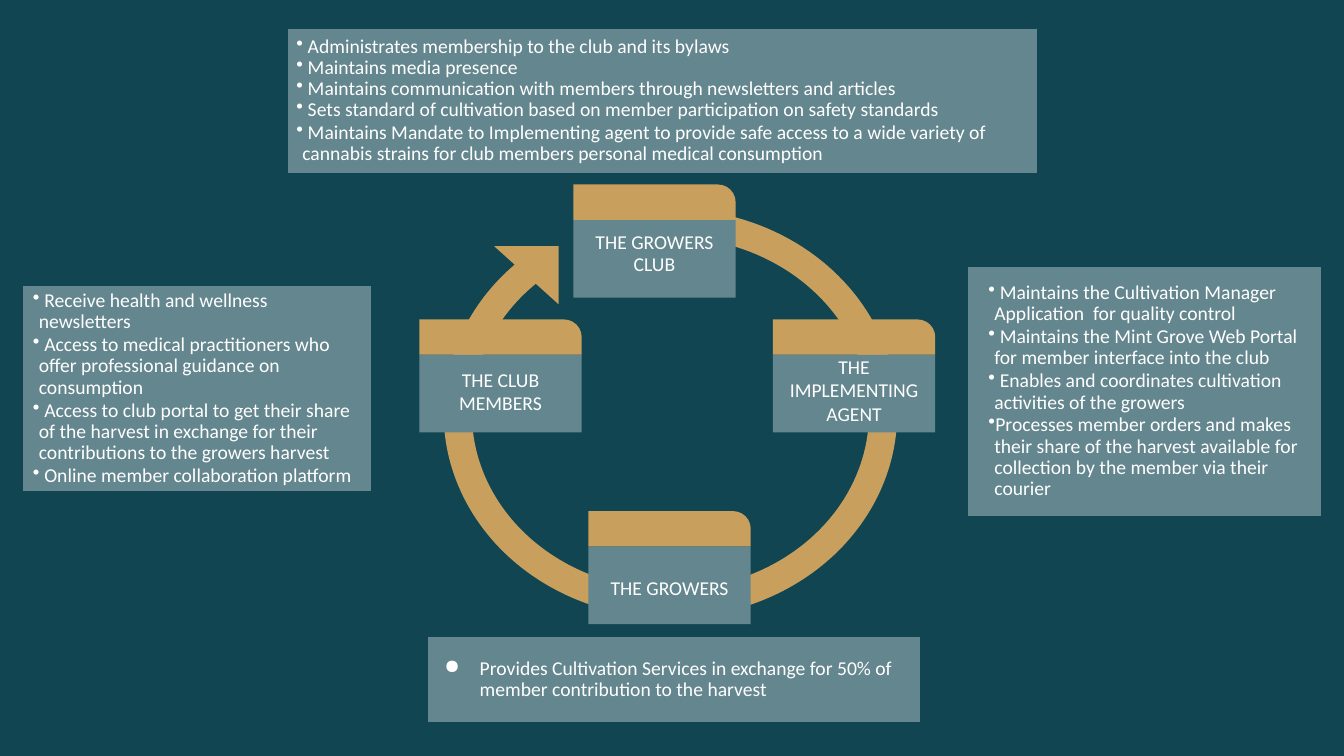
from lxml import etree
from pptx import Presentation
from pptx import util as u
from pptx.dml.color import RGBColor
from pptx.enum import shapes, text
from pptx.oxml.ns import qn

DARK, SLATE, GOLD, WHITE = "104551", "64868E", "C89F5D", "FFFFFF"
KIND = shapes.MSO_SHAPE
NODE_W, TAB_H, BODY_H = 4.09, 0.89, 1.96

# left, top, label, line spacing, top inset
NODES = [
    (19.48, 8.05, "THE IMPLEMENTING AGENT", 1, 0),
    (14.45, 4.65, "THE GROWERS CLUB", 0.9, 0.33),
    (10.57, 8.05, "THE CLUB MEMBERS", 1, 0.33),
    (14.83, 12.88, "THE GROWERS", 0.9, 0.82),
]

# box, (left inset, right inset), (bullet, margin, indent),
# first item with a gap above it, items
TIGHT = ("•", 0.15, -0.25)
WIDE = ("●", 1.27, -0.89)
PANELS = [
    ((24.38, 6.71, 8.92, 6.3), (0.53, 0.56), TIGHT, 1, [
        " Maintains the Cultivation Manager Application  for quality control",
        " Maintains the Mint Grove Web Portal for member interface into the club",
        " Enables and coordinates cultivation activities of the growers",
        "Processes member orders and makes their share of the harvest "
        "available for collection by the member via their courier",
    ]),
    ((7.24, 0.71, 18.92, 3.66), (0.23, 0), TIGHT, 4, [
        " Administrates membership to the club and its bylaws",
        " Maintains media presence",
        " Maintains communication with members through newsletters and articles",
        " Sets standard of cultivation based on member participation on "
        "safety standards",
        " Maintains Mandate to Implementing agent to provide safe access to a "
        "wide variety of cannabis strains for club members personal medical "
        "consumption",
    ]),
    ((10.77, 16.05, 12.42, 2.16), (0.05, 0), WIDE, 1, [
        "Provides Cultivation Services in exchange for 50% of member "
        "contribution to the harvest",
    ]),
    ((0.58, 7.19, 8.79, 5.21), (0.25, 0.25), TIGHT, 1, [
        " Receive health and wellness newsletters",
        " Access to medical practitioners who offer professional guidance on "
        "consumption",
        " Access to club portal to get their share of the harvest in exchange "
        "for their contributions to the growers harvest",
        " Online member collaboration platform",
    ]),
]


def paint(fill, color):
    fill.solid()
    fill.fore_color.rgb = RGBColor.from_string(color)


def add_block(slide, kind, box, color):
    block = slide.shapes.add_shape(kind, *map(u.Cm, box))
    block.shadow.inherit = False
    paint(block.fill, color)
    block.line.fill.background()
    return block


def set_frame(frame, left, top, right, anchor):
    frame.word_wrap = True
    frame.vertical_anchor = anchor
    frame.margin_left, frame.margin_right = u.Cm(left), u.Cm(right)
    frame.margin_top, frame.margin_bottom = u.Cm(top), 0


def style(para, align, spacing):
    para.alignment = align
    para.line_spacing = spacing
    para.font.name = "Calibri"
    para.font.size = u.Pt(14)
    paint(para.font.fill, WHITE)


def add_bullet(para, mark, margin, indent):
    props = para._p.get_or_add_pPr()
    props.set("marL", str(u.Cm(margin)))
    props.set("indent", str(u.Cm(indent)))
    tint = etree.SubElement(props, qn("a:buClr"))
    etree.SubElement(tint, qn("a:srgbClr"), val=WHITE)
    etree.SubElement(props, qn("a:buSzPts"), val="1400")
    etree.SubElement(props, qn("a:buChar"), char=mark)


def add_ring(slide):
    """Circular arrow: from behind the top node clockwise into its head."""
    ring = add_block(slide, KIND.BLOCK_ARC, (11.18, 5.26, 11.43, 10.31), GOLD)
    for i, angle in enumerate((90, 46)):
        ring.adjustments[i] = angle * 0.6  # 60000 units per degree
    ring.adjustments[2] = 0.069
    head = add_block(slide, KIND.RIGHT_TRIANGLE, (12.45, 6.2, 1.63, 1.47), GOLD)
    ring.rotation = head.rotation = 180


def add_node(slide, left, top, label, spacing, inset):
    body = add_block(slide, KIND.RECTANGLE,
                     (left, top + TAB_H, NODE_W, BODY_H), SLATE)
    frame = body.text_frame
    set_frame(frame, 0.33, inset, 0.33, text.MSO_ANCHOR.TOP)
    frame.text = label
    style(frame.paragraphs[0], text.PP_ALIGN.CENTER, spacing)
    tab = add_block(slide, KIND.ROUND_1_RECTANGLE,
                    (left, top, NODE_W, TAB_H), GOLD)
    tab.adjustments[0] = 0.5


def add_panel(slide, box, sides, bullet, first, items):
    panel = add_block(slide, KIND.RECTANGLE, box, SLATE)
    paint(panel.line.fill, DARK)
    panel.line.width = u.Pt(0.75)
    frame = panel.text_frame
    set_frame(frame, sides[0], 0, sides[1], text.MSO_ANCHOR.MIDDLE)
    frame.text = "\n".join(items)
    for i, para in enumerate(frame.paragraphs):
        para.space_before = u.Pt(1.2 if i >= first else 0)
        add_bullet(para, *bullet)
        style(para, text.PP_ALIGN.LEFT, 0.9)


def main():
    deck = Presentation()
    deck.slide_width, deck.slide_height = u.Cm(33.87), u.Cm(19.05)
    slide = deck.slides.add_slide(deck.slide_layouts[6])
    paint(slide.background.fill, DARK)
    add_ring(slide)
    for node in NODES:
        add_node(slide, *node)
    for panel in PANELS:
        add_panel(slide, *panel)
    deck.save("out.pptx")


if __name__ == "__main__":
    main()
